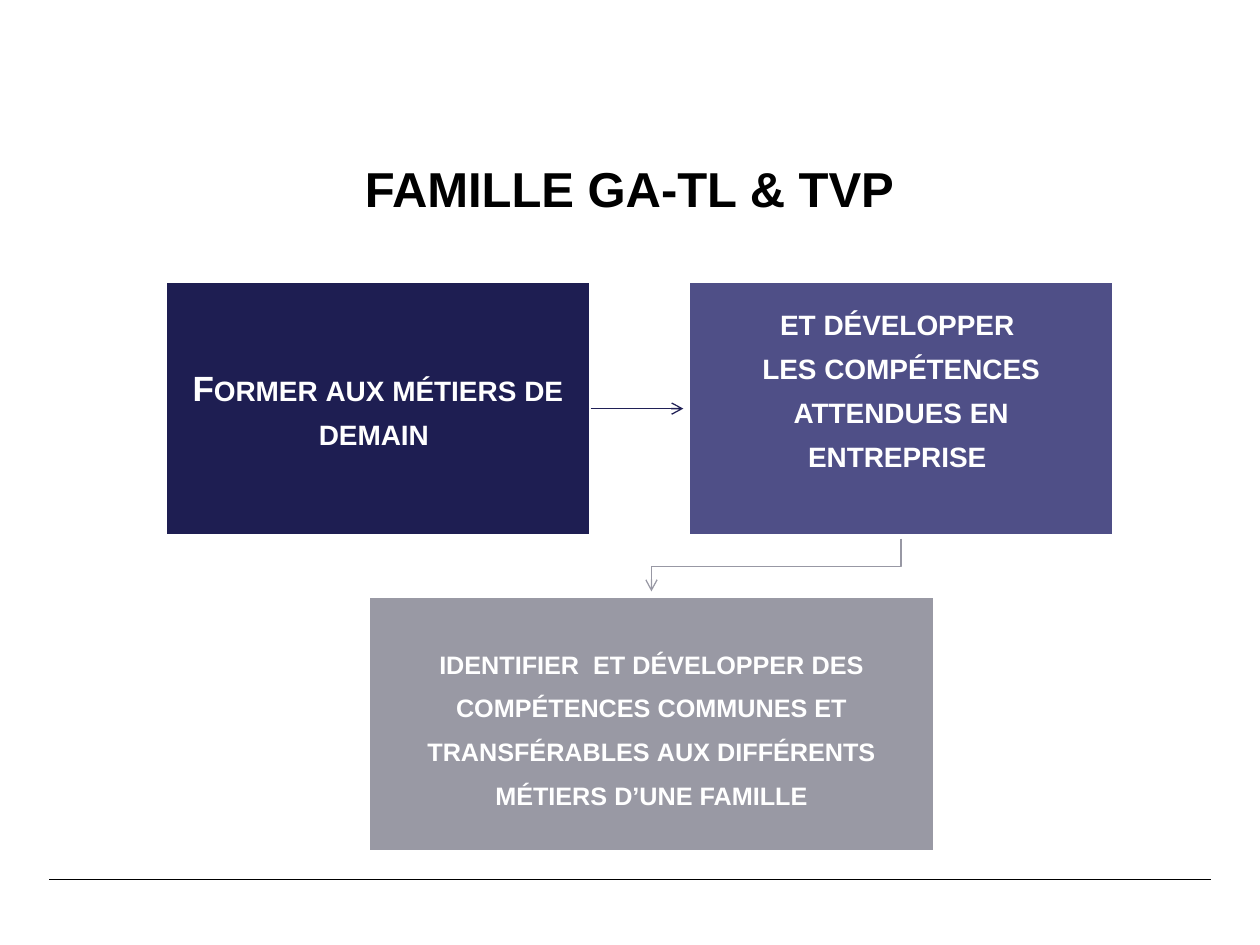
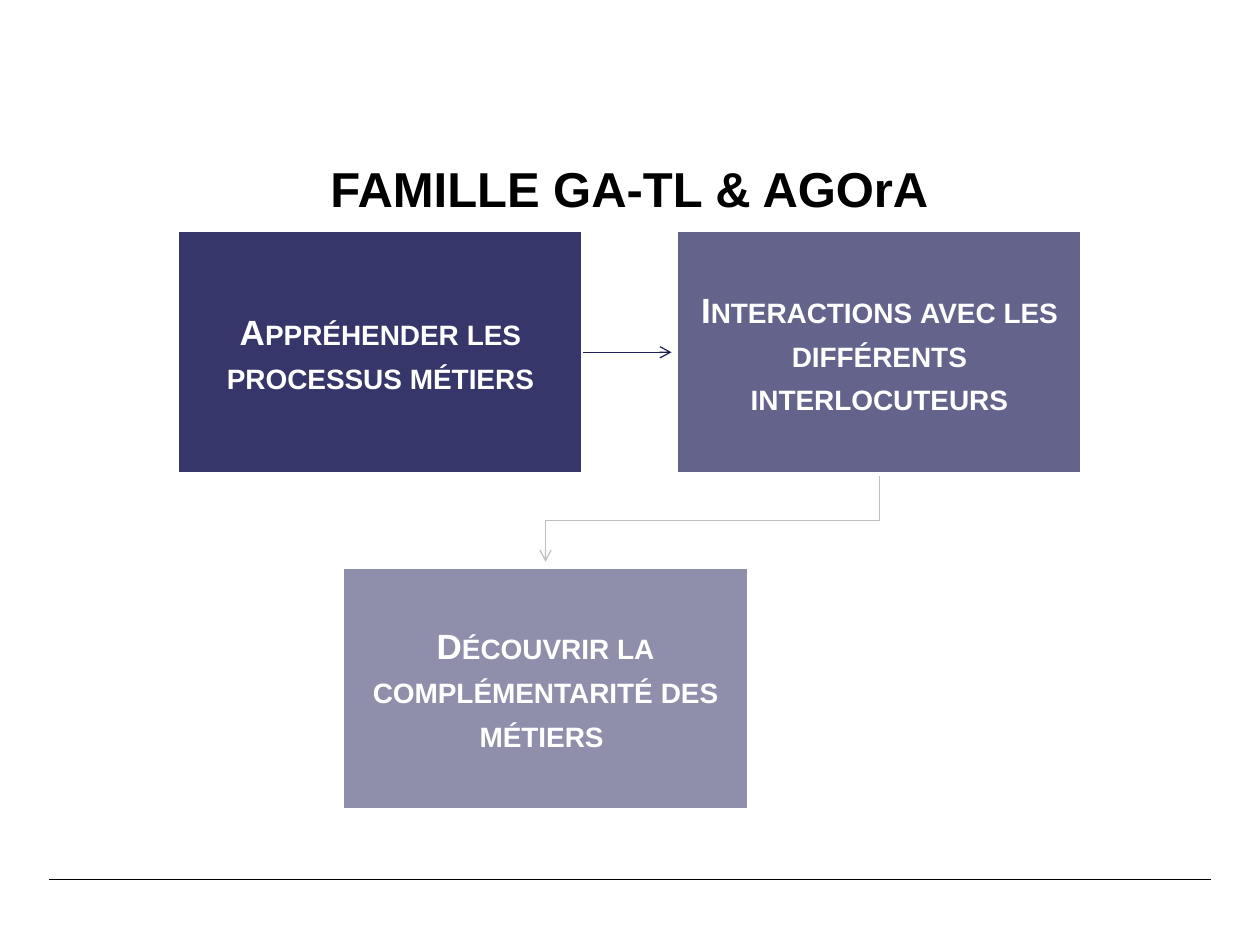
from collections import namedtuple

from pptx import Presentation
from pptx.dml.color import RGBColor
from pptx.enum.shapes import MSO_CONNECTOR, MSO_SHAPE
from pptx.enum.text import MSO_ANCHOR, PP_ALIGN
from pptx.oxml.ns import qn
from pptx.util import Inches, Pt
from lxml.etree import SubElement

COLOURS = {
    "black": "000000", "white": "FFFFFF", "indigo": "21215A",
    "navy": "1E1E52", "violet": "4F4F87", "grey": "9999A4",
    "arrow": "202056", "grey_arrow": "9898A4", "pale_arrow": "BEBEC4",
}
FONT = "Arial"
GAP_RATIO = 0.23     # gap between the two upper boxes, per box width
HEIGHT_RATIO = 0.6   # box height per upper box width
ARROW_CLEARANCE = 0.04

Area = namedtuple("Area", "left top width height")
# spare_lines: empty line heights kept free under the text
Step = namedtuple("Step", "text fill opacity size spare_lines", defaults=(100, 20, 0))


def colour(name):
    return RGBColor.from_string(COLOURS[name])


def write(para, text, size, ink, small_caps=False):
    """Add text to a paragraph, one run per line."""
    for number, line in enumerate(text.split("\n")):
        if number:
            para.add_line_break()
        span = para.add_run()
        span.text = line
        span.font.name = FONT
        span.font.size = Pt(size)
        span.font.bold = True
        span.font.color.rgb = colour(ink)
        if small_caps:
            span._r.get_or_add_rPr().set("cap", "small")


def set_margins(frame, margin, extra_bottom=0):
    frame.margin_left = frame.margin_right = frame.margin_top = Inches(margin)
    frame.margin_bottom = Inches(margin + extra_bottom)


def style_line(line_shape, ink, width, arrow=False):
    """Colour a connector or open outline, with no shadow."""
    line_shape.line.color.rgb = colour(ink)
    line_shape.line.width = Pt(width)
    properties = line_shape._element.spPr
    if arrow:
        SubElement(properties.find(qn("a:ln")), qn("a:tailEnd"), type="arrow")
    if properties.find(qn("a:effectLst")) is None:
        SubElement(properties, qn("a:effectLst"))


def add_frame(deck, title):
    """Add a page with the shared title and footer rule."""
    page = deck.slides.add_slide(deck.slide_layouts[5])
    rule = page.shapes.add_connector(
        MSO_CONNECTOR.STRAIGHT, Inches(0.39), Inches(6.98), Inches(9.61), Inches(6.98))
    style_line(rule, "black", 0.8)

    heading = page.shapes.title
    heading.left, heading.top = Inches(0.39), Inches(1.31)
    heading.width, heading.height = Inches(9.21), Inches(1.05)
    frame = heading.text_frame
    frame.word_wrap = True
    frame.vertical_anchor = MSO_ANCHOR.TOP
    set_margins(frame, 0)
    para = frame.paragraphs[0]
    para.alignment = PP_ALIGN.CENTER
    para.line_spacing = 0.9
    write(para, title, 28, "black")
    return page


def add_step(page, area, step):
    """Add one filled box with its small-caps text."""
    box = page.shapes.add_shape(MSO_SHAPE.RECTANGLE, *(Inches(length) for length in area))
    box.shadow.inherit = False
    box.fill.solid()
    box.fill.fore_color.rgb = colour(step.fill)
    if step.opacity < 100:
        fill = box._element.spPr.find(qn("a:solidFill"))
        SubElement(fill[0], qn("a:alpha"), val=str(step.opacity * 1000))
    box.line.color.rgb = colour("white")
    box.line.width = Pt(2)

    frame = box.text_frame
    frame.word_wrap = True
    frame.vertical_anchor = MSO_ANCHOR.MIDDLE
    set_margins(frame, step.size * 0.008, step.spare_lines * 25 / 72)
    para = frame.paragraphs[0]
    para.alignment = PP_ALIGN.CENTER
    para.line_spacing = Pt(25)
    write(para, step.text, step.size, "white", small_caps=True)
    return box


def add_elbow(page, start, end, bend, ink):
    """Draw a down-across-down arrow."""
    points = [(start[0], bend), (end[0], bend), end]
    builder = page.shapes.build_freeform(*(Inches(value) for value in start))
    builder.add_line_segments(
        [(Inches(x), Inches(y)) for x, y in points], close=False)
    elbow = builder.convert_to_shape()
    elbow.fill.background()
    elbow.shadow.inherit = False
    style_line(elbow, ink, 0.75, arrow=True)


def add_flow(page, area, steps, last_offset, last_width, elbow_ink):
    """Place two boxes above and one below, joined by arrows."""
    width = area.width / (2 + GAP_RATIO)
    height = width * HEIGHT_RATIO
    first = Area(area.left, area.top, width, height)
    second = first._replace(left=area.left + area.width - width)
    last = Area(area.left + last_offset, area.top + area.height - height,
                last_width or width, height)
    boxes = [add_step(page, place, step)
             for place, step in zip((first, second, last), steps)]

    # Arrow across the top row
    middle = Inches(first.top + height / 2)
    across = page.shapes.add_connector(
        MSO_CONNECTOR.STRAIGHT, Inches(first.left + width), middle,
        Inches(second.left - ARROW_CLEARANCE), middle)
    across.begin_connect(boxes[0], 3)
    style_line(across, "arrow", 0.75, arrow=True)

    # Arrow down to the last box
    bottom = second.top + height
    add_elbow(page, (second.left + width / 2, bottom + ARROW_CLEARANCE / 2),
              (last.left + last.width / 2, last.top - ARROW_CLEARANCE),
              (bottom + last.top) / 2, elbow_ink)


def main():
    deck = Presentation()
    deck.slide_width, deck.slide_height = Inches(10), Inches(7.5)

    page = add_frame(deck, "FAMILLE GA-TL & TVP")
    add_flow(page, Area(1.31, 2.23, 7.53, 4.53), [
        Step("Former aux métiers de demain ", "navy"),
        Step("et développer \nles compétences attendues en entreprise ", "violet",
             spare_lines=1),
        Step("identifier  et développer des compétences communes et "
             "transférables aux différents métiers d’une famille", "grey", size=18),
    ], last_offset=1.61, last_width=4.5, elbow_ink="grey_arrow")

    page = add_frame(deck, "FAMILLE GA-TL & AGOrA")
    add_flow(page, Area(1.41, 1.83, 7.18, 4.6), [
        Step("Appréhender les processus métiers", "indigo", 90),
        Step("Interactions avec les différents interlocuteurs", "indigo", 70),
        Step("Découvrir la complémentarité des métiers ", "indigo", 50),
    ], last_offset=1.31, last_width=None, elbow_ink="pale_arrow")

    deck.save("out.pptx")


if __name__ == "__main__":
    main()
